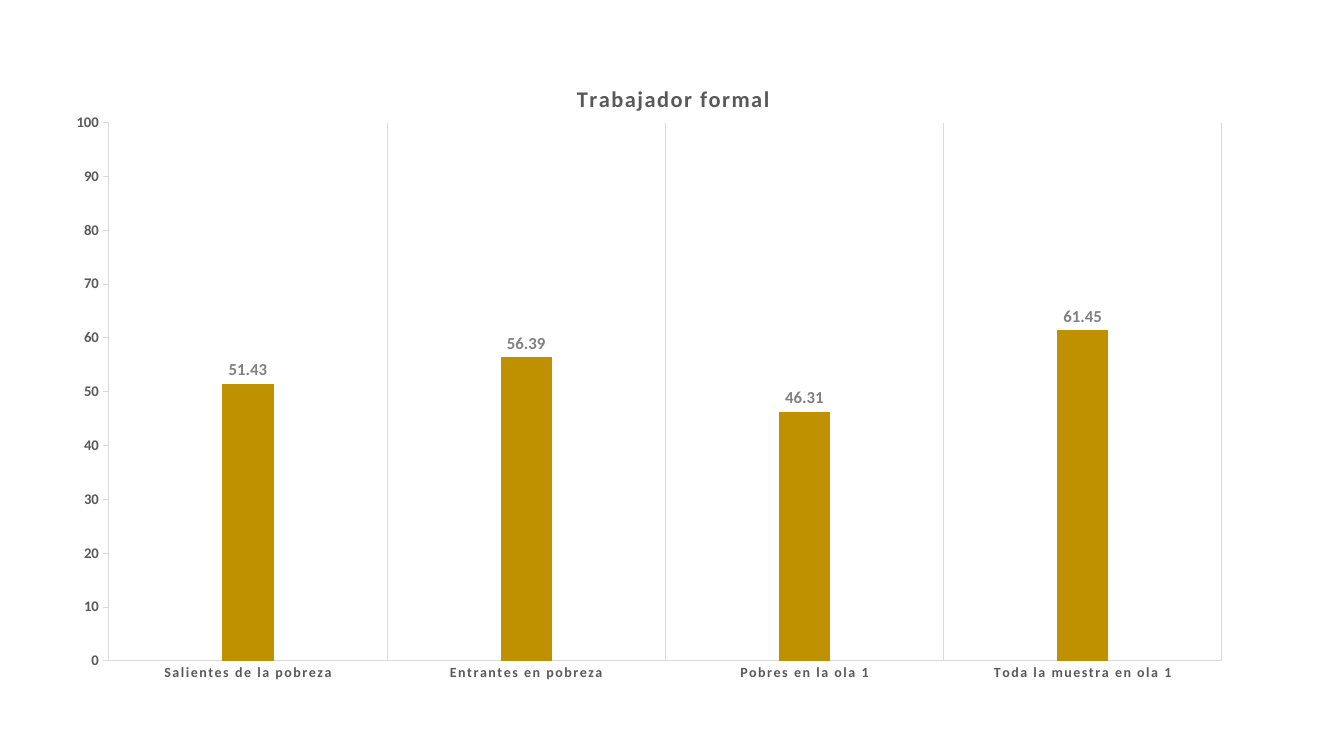
from typing import NamedTuple

from pptx import Presentation
from pptx.chart.data import CategoryChartData
from pptx.dml.color import RGBColor
from pptx.enum.chart import XL_CHART_TYPE, XL_LABEL_POSITION, XL_TICK_MARK
from pptx.oxml import parse_xml
from pptx.oxml.ns import nsdecls
from pptx.util import Pt

COLORS = {"bars": "BF9000", "text": "595959", "values": "808080",
          "lines": "D9D9D9", "base": "000000"}
FONT = "Calibri"
TITLE = "Trabajador formal"
LETTER_SPACING = "120"  # hundredths of a point


class Group(NamedTuple):
    name: str
    share: float


GROUPS = [
    Group("Salientes de la pobreza", 51.43),
    Group("Entrantes en pobreza", 56.39),
    Group("Pobres en la ola 1", 46.31),
    Group("Toda la muestra en ola 1", 61.45),
]


def style_font(font, size: float, color: str, bold: bool = True) -> None:
    font.name = FONT
    font.size = Pt(size)
    font.bold = bold
    font.color.rgb = RGBColor.from_string(COLORS[color])


def style_line(line) -> None:
    line.width = Pt(0.75)
    line.color.rgb = RGBColor.from_string(COLORS["lines"])


def style_axis(axis, size: float, tick_mark: XL_TICK_MARK, grid: bool) -> None:
    style_font(axis.tick_labels.font, size, "text")
    style_line(axis.format.line)
    axis.major_tick_mark = tick_mark
    axis.minor_tick_mark = XL_TICK_MARK.NONE
    axis.has_major_gridlines = grid
    if grid:
        style_line(axis.major_gridlines.format.line)


def place_plot(chart, x: float, y: float, w: float, h: float) -> None:
    """Fix the inner plot area, in fractions of the chart."""
    plot_area = chart.element.xpath(".//c:plotArea")[0]
    for automatic in plot_area.xpath("./c:layout"):
        plot_area.remove(automatic)
    plot_area.insert(0, parse_xml(
        f'<c:layout {nsdecls("c")}><c:manualLayout>'
        '<c:layoutTarget val="inner"/><c:xMode val="edge"/><c:yMode val="edge"/>'
        f'<c:x val="{x}"/><c:y val="{y}"/><c:w val="{w}"/><c:h val="{h}"/>'
        '</c:manualLayout></c:layout>'))


def main() -> None:
    prs = Presentation()
    prs.slide_width, prs.slide_height = Pt(960), Pt(540)
    slide = prs.slides.add_slide(prs.slide_layouts[6])

    # Chart with its data
    shares = CategoryChartData(number_format="0.00")
    shares.categories = [group.name for group in GROUPS]
    shares.add_series(TITLE, [group.share for group in GROUPS])
    chart = slide.shapes.add_chart(
        XL_CHART_TYPE.COLUMN_CLUSTERED,
        Pt(48.3), Pt(44), Pt(865.2), Pt(449.8), shares).chart
    chart.has_legend = False
    style_font(chart.font, 10, "base", bold=False)
    place_plot(chart, 0.034, 0.097, 0.919, 0.855)

    # Heading
    heading = chart.chart_title.text_frame
    heading.text = TITLE
    heading_run = heading.paragraphs[0].runs[0]
    style_font(heading_run.font, 16, "text")
    heading_run.font._element.set("spc", LETTER_SPACING)
    chart.chart_title.include_in_layout = False

    # Axes
    groups_axis, percent_axis = chart.category_axis, chart.value_axis
    style_axis(groups_axis, 10, XL_TICK_MARK.NONE, grid=True)
    groups_axis._element.xpath("./c:txPr//a:defRPr")[0].set("spc", LETTER_SPACING)
    style_axis(percent_axis, 10.5, XL_TICK_MARK.OUTSIDE, grid=False)
    percent_axis.minimum_scale, percent_axis.maximum_scale = 0, 100
    percent_axis.major_unit = 10
    percent_axis.tick_labels.number_format = "0"
    percent_axis.tick_labels.number_format_is_linked = False

    # Bars and their values
    bars = chart.plots[0]
    bars.gap_width, bars.overlap = 444, -90
    bars.vary_by_categories = False
    formal = bars.series[0]
    formal.format.fill.solid()
    formal.format.fill.fore_color.rgb = RGBColor.from_string(COLORS["bars"])
    labels = formal.data_labels
    labels.show_value = True
    labels.position = XL_LABEL_POSITION.OUTSIDE_END
    style_font(labels.font, 12, "values")

    prs.save("out.pptx")


if __name__ == "__main__":
    main()
